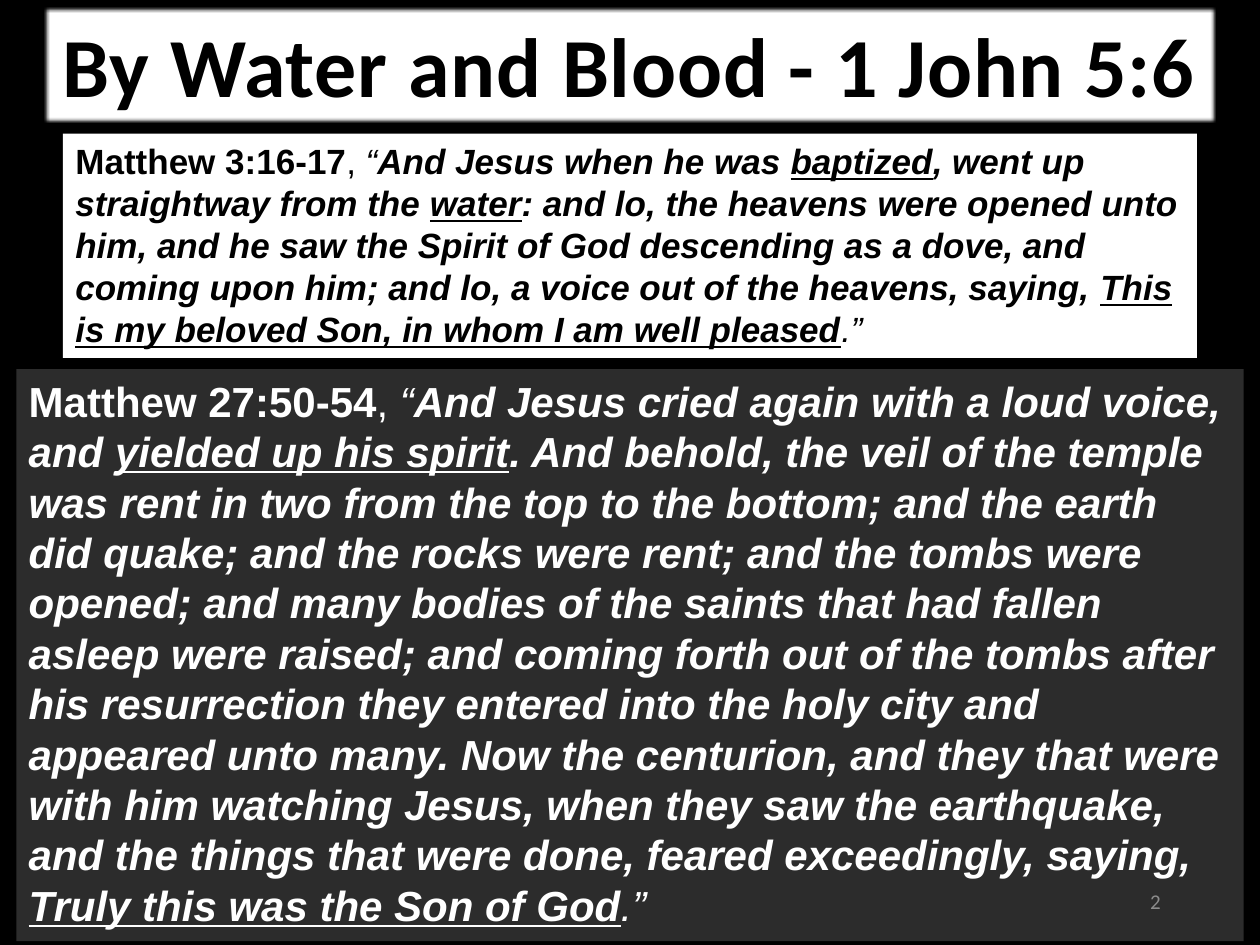
"""Builds the slide on water and blood in 1 John 5:6."""
from lxml import etree
from pptx import Presentation
from pptx.dml.color import RGBColor
from pptx.enum import text
from pptx.oxml import ns
from pptx.util import Inches, Pt

BLACK = RGBColor(0x00, 0x00, 0x00)
WHITE = RGBColor(0xFF, 0xFF, 0xFF)
DARK = RGBColor(0x2C, 0x2C, 0x2C)
GREY = RGBColor(0x8C, 0x8C, 0x8C)

BAPTISM = (
    "And Jesus when he was _baptized_, went up straightway from the _water_: "
    "and lo, the heavens were opened unto him, and he saw the Spirit of God "
    "descending as a dove, and coming upon him; and lo, a voice out of the "
    "heavens, saying, _This is my beloved Son, in whom I am well pleased_"
)
CROSS = (
    "And Jesus cried again with a loud voice, and _yielded up his spirit_. "
    "And behold, the veil of the temple was rent in two from the top to the "
    "bottom; and the earth did quake; and the rocks were rent; and the tombs "
    "were opened; and many bodies of the saints that had fallen asleep were "
    "raised; and coming forth out of the tombs after his resurrection they "
    "entered into the holy city and appeared unto many. Now the centurion, "
    "and they that were with him watching Jesus, when they saw the "
    "earthquake, and the things that were done, feared exceedingly, saying, "
    "_Truly this was the Son of God_"
)


def paint(fill, color):
    """Make a fill solid in one colour."""
    fill.solid()
    fill.fore_color.rgb = color


def style(font, name, size, color):
    """Set the face, size and colour of a font."""
    font.name, font.size = name, Pt(size)
    font.color.rgb = color


def soften(shape, radius):
    """Blur the edges of a shape."""
    effects = etree.SubElement(shape.element.spPr, ns.qn("a:effectLst"))
    edge = etree.SubElement(effects, ns.qn("a:softEdge"))
    edge.set("rad", str(Pt(radius)))


def add_title(slide, words):
    """Fill the title placeholder and lay it out as a white banner."""
    title = slide.shapes.title
    title.left, title.top = Inches(0.35), Inches(0.06)
    title.width, title.height = Inches(9.3), Inches(0.91)
    paint(title.fill, WHITE)
    soften(title, 2.5)
    frame = title.text_frame
    frame.text = words
    frame.word_wrap = False
    frame.auto_size = text.MSO_AUTO_SIZE.SHAPE_TO_FIT_TEXT
    frame.vertical_anchor = text.MSO_ANCHOR.TOP
    line = frame.paragraphs[0]
    line.alignment = text.PP_ALIGN.CENTER
    style(line.font, "Calibri", 48, BLACK)
    line.font.bold = True
    line.runs[0].font._element.set("spc", "50")


def add_run(line, words, bold=False, italic=False, under=False):
    """Append a run with its emphasis."""
    run = line.add_run()
    run.text = words
    font = run.font
    font.bold, font.italic, font.underline = bold, italic, under


def add_verse(slide, box, source, quote, size, ink, back):
    """Add a filled box with a cited quote; underscores mark underlines."""
    shape = slide.shapes.add_textbox(*map(Inches, box))
    paint(shape.fill, back)
    frame = shape.text_frame
    frame.word_wrap = True
    frame.auto_size = text.MSO_AUTO_SIZE.SHAPE_TO_FIT_TEXT
    line = frame.paragraphs[0]
    style(line.font, "Arial", size, ink)
    add_run(line, source, bold=True)
    add_run(line, ", ")
    add_run(line, "“", italic=True)
    for i, part in enumerate(quote.split("_")):
        if part:
            add_run(line, part, bold=True, italic=True, under=i % 2 == 1)
    add_run(line, ".”", italic=True)


def add_number(slide, number):
    """Add the page number at the lower right."""
    box = map(Inches, (7.06, 6.95, 2.25, 0.4))
    frame = slide.shapes.add_textbox(*box).text_frame
    frame.text = number
    frame.word_wrap = True
    frame.vertical_anchor = text.MSO_ANCHOR.MIDDLE
    line = frame.paragraphs[0]
    line.alignment = text.PP_ALIGN.RIGHT
    style(line.font, "Calibri", 12, GREY)


def main():
    """Build and save the slide."""
    deck = Presentation()
    deck.slide_width, deck.slide_height = Inches(10), Inches(7.5)
    slide = deck.slides.add_slide(deck.slide_layouts.get_by_name("Title Only"))
    paint(slide.background.fill, BLACK)
    add_title(slide, "By Water and Blood - 1 John 5:6")
    add_verse(slide, (0.5, 1.06, 9, 1.78), "Matthew 3:16-17", BAPTISM,
              20, BLACK, WHITE)
    add_verse(slide, (0.13, 2.93, 9.74, 4.54), "Matthew 27:50-54", CROSS,
              24, WHITE, DARK)
    add_number(slide, "2")
    deck.save("out.pptx")


if __name__ == "__main__":
    main()
